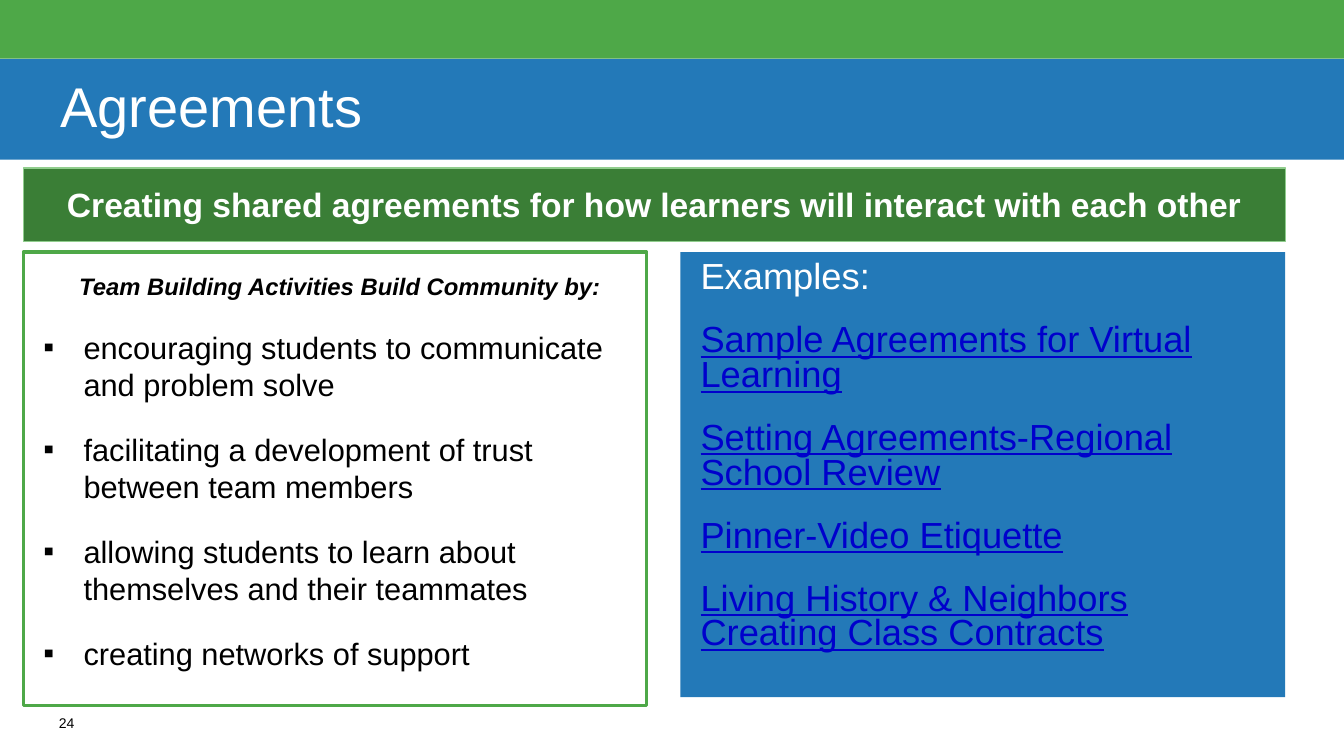
from dataclasses import dataclass
from typing import Optional

from lxml import etree
from pptx import Presentation, util as u
from pptx.dml import color
from pptx.enum import shapes, text
from pptx.oxml import ns

COLUMNS, ROWS = 160, 90
CELL = u.Inches(1) / 12
FONT = "Arial"
COLORS = {
    "green": "4EA848",
    "dark green": "3A7E36",
    "light green": "90CD8D",
    "blue": "2379B8",
    "link": "0000CC",
    "white": "FFFFFF",
    "black": "000000",
}


@dataclass(frozen=True)
class Area:
    column: float
    row: float
    columns: float
    rows: float


@dataclass(frozen=True)
class Line:
    words: str
    size: float
    color: str = "black"
    bold: bool = False
    italic: bool = False
    underline: bool = False
    align: text.PP_ALIGN = text.PP_ALIGN.LEFT
    spacing: float = 1.0
    before: float = 0
    after: float = 0
    margin: float = 0
    hanging: float = 0
    bullet: Optional[str] = None


@dataclass(frozen=True)
class Panel:
    area: Area
    lines: tuple[Line, ...]
    insets: tuple[float, float, float, float] = (0.1, 0.1, 0.1, 0.1)
    fill: Optional[str] = None
    border: Optional[str] = None
    border_width: float = 0
    anchor: text.MSO_ANCHOR = text.MSO_ANCHOR.TOP


def example(words: str) -> Line:
    return Line(words, 25.9, "link", underline=True, spacing=0.8, before=20, margin=0.1)


def benefit(words: str, after: float = 0) -> Line:
    return Line(words, 22, before=20, after=after, margin=0.5, hanging=0.4, bullet="▪")


BAND = Area(0, 0, COLUMNS, 7)
TITLE = Panel(
    Area(0, 7, COLUMNS, 12),
    (Line("Agreements", 40, "white", spacing=0.9),),
    insets=(0.6, 0, 0.6, 0),
    fill="blue",
    anchor=text.MSO_ANCHOR.MIDDLE,
)
BANNER = Panel(
    Area(2.75, 20, 150.25, 8.75),
    (
        Line(
            "Creating shared agreements for how learners will interact with each other",
            24, "white", bold=True, align=text.PP_ALIGN.CENTER, spacing=1.15,
        ),
    ),
    fill="dark green",
    border="light green",
    border_width=0.75,
)
BENEFITS = Panel(
    Area(2.75, 30, 74.25, 54),
    (
        Line(
            "Team Building Activities Build Community by:",
            17, bold=True, italic=True, align=text.PP_ALIGN.CENTER, margin=0.1,
        ),
        benefit("encouraging students to communicate and problem solve"),
        benefit("facilitating a development of trust between team members"),
        benefit("allowing students to learn about themselves and their teammates"),
        benefit("creating networks of support", after=20),
    ),
    insets=(0.1, 0.2, 0.1, 0.1),
    border="green",
    border_width=2.25,
)
EXAMPLES = Panel(
    Area(81, 30, 72, 53),
    (
        Line("Examples:", 25.9, "white", spacing=0.8, margin=0.1),
        example("Sample Agreements for Virtual Learning"),
        example("Setting Agreements-Regional School Review"),
        example("Pinner-Video Etiquette"),
        example("Living History & Neighbors Creating Class Contracts"),
    ),
    fill="blue",
)
PAGE_NUMBER = Panel(Area(7, 85, 5, 3), (Line("24", 10),), insets=(0, 0, 0, 0))


def rgb(name: str) -> color.RGBColor:
    return color.RGBColor.from_string(COLORS[name])


def bounds(area: Area) -> list[int]:
    return [round(n * CELL) for n in (area.column, area.row, area.columns, area.rows)]


def set_bullet(paragraph, line: Line) -> None:
    properties = paragraph._p.get_or_add_pPr()
    properties.set("marL", str(u.Inches(line.margin)))
    properties.set("indent", str(-u.Inches(line.hanging)))
    if line.bullet is None:
        etree.SubElement(properties, ns.qn("a:buNone"))
        return
    bullet_color = etree.SubElement(properties, ns.qn("a:buClr"))
    etree.SubElement(bullet_color, ns.qn("a:srgbClr"), val=COLORS[line.color])
    etree.SubElement(properties, ns.qn("a:buFont"), typeface=FONT)
    etree.SubElement(properties, ns.qn("a:buChar"), char=line.bullet)


def format_line(paragraph, line: Line) -> None:
    set_bullet(paragraph, line)
    paragraph.alignment = line.align
    paragraph.line_spacing = line.spacing
    paragraph.space_before = u.Pt(line.before)
    paragraph.space_after = u.Pt(line.after)
    for run in paragraph.runs:
        font = run.font
        font.name = FONT
        font.size = u.Pt(line.size)
        font.color.rgb = rgb(line.color)
        font.bold = line.bold
        font.italic = line.italic
        font.underline = line.underline


def draw_panel(shape, panel: Panel) -> None:
    shape.left, shape.top, shape.width, shape.height = bounds(panel.area)
    if panel.fill:
        shape.fill.solid()
        shape.fill.fore_color.rgb = rgb(panel.fill)
    if panel.border:
        shape.line.color.rgb = rgb(panel.border)
        shape.line.width = u.Pt(panel.border_width)
    frame = shape.text_frame
    frame.text = "\n".join(line.words for line in panel.lines)
    frame.word_wrap = True
    frame.auto_size = text.MSO_AUTO_SIZE.NONE
    frame.vertical_anchor = panel.anchor
    frame.margin_left, frame.margin_top, frame.margin_right, frame.margin_bottom = (
        u.Inches(inset) for inset in panel.insets
    )
    for paragraph, line in zip(frame.paragraphs, panel.lines):
        format_line(paragraph, line)


def main() -> None:
    presentation = Presentation()
    presentation.slide_width = round(COLUMNS * CELL)
    presentation.slide_height = round(ROWS * CELL)
    slide = presentation.slides.add_slide(
        presentation.slide_layouts.get_by_name("Comparison")
    )
    placeholders = {
        shape.placeholder_format.idx: shape for shape in slide.placeholders
    }
    unused = placeholders[3].element
    unused.getparent().remove(unused)

    band = slide.shapes.add_shape(shapes.MSO_SHAPE.RECTANGLE, *bounds(BAND))
    band.shadow.inherit = False
    band.fill.solid()
    band.fill.fore_color.rgb = rgb("green")
    band.line.fill.background()

    for index, panel in {0: TITLE, 1: BANNER, 2: BENEFITS, 4: EXAMPLES}.items():
        draw_panel(placeholders[index], panel)
    draw_panel(slide.shapes.add_textbox(*bounds(PAGE_NUMBER.area)), PAGE_NUMBER)
    presentation.save("out.pptx")


if __name__ == "__main__":
    main()
